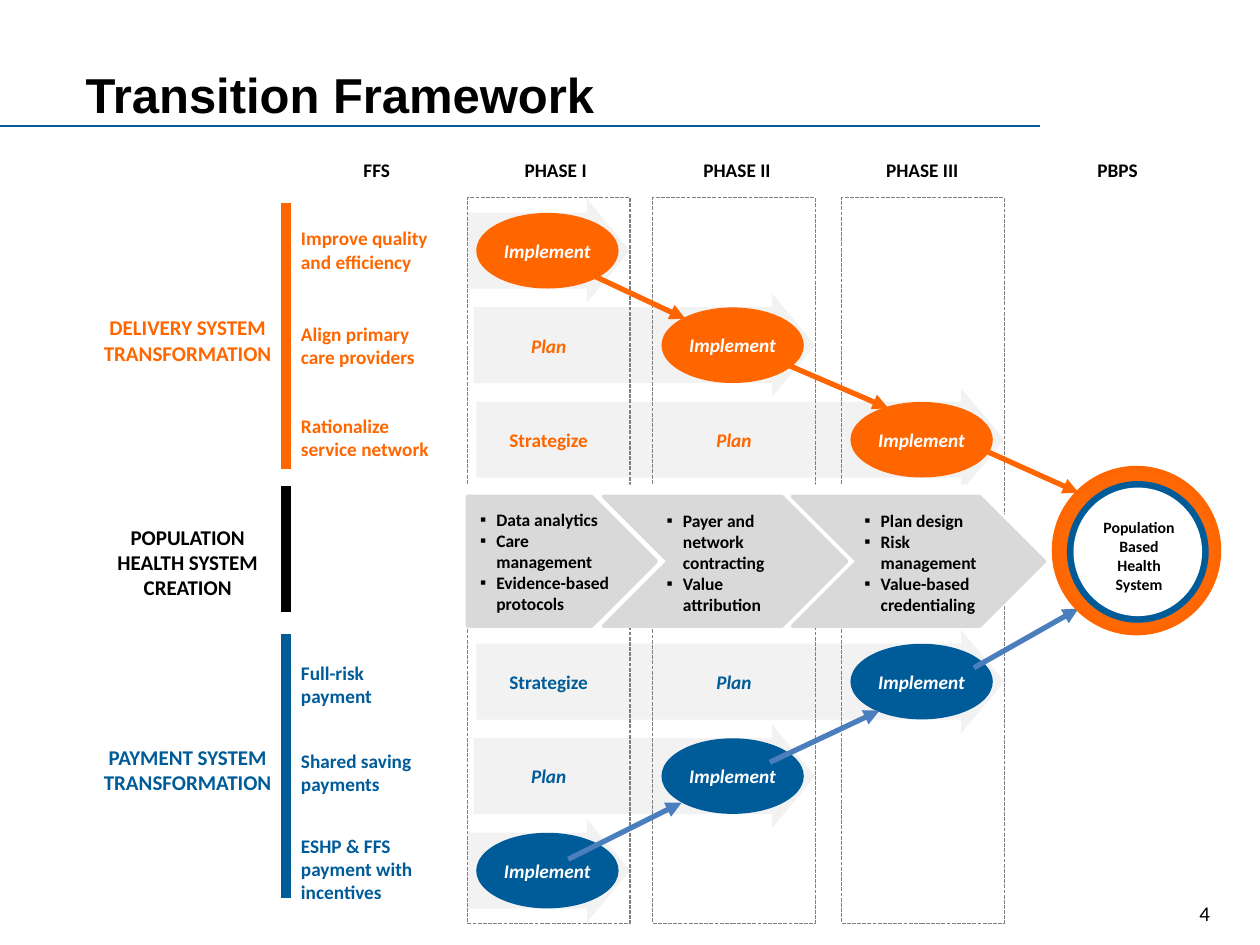
from typing import NamedTuple

from lxml import etree
from pptx import Presentation, util as u
from pptx.dml.color import RGBColor
from pptx.enum import dml, shapes, text
from pptx.oxml import ns

S, A = shapes.MSO_SHAPE, text.PP_ALIGN
MID, TOP = text.MSO_ANCHOR.MIDDLE, text.MSO_ANCHOR.TOP
ORANGE, BLUE, SKY = "FF6600", "005B99", "4B7EBC"
BLACK, WHITE, GREY, PALE = "000000", "FFFFFF", "D9D9D9", "F2F2F2"

deck = Presentation()
deck.slide_width, deck.slide_height = u.Inches(10), u.Inches(7.5)
COL, ROW = deck.slide_width / 10, deck.slide_height / 7.5
slide = deck.slides.add_slide(deck.slide_layouts[4])
PHASES = (3.71, 5.18, 6.68)
WIDE, STEP = 1.29, 0.75


class Box(NamedTuple):
    """Left, top, width and height in columns and rows."""
    x: float
    y: float
    w: float
    h: float


class Lane(NamedTuple):
    """One row of work that ends in an oval."""
    label: str
    top: float
    steps: tuple
    y: float
    hue: str


class Group(NamedTuple):
    """One side heading with its upright bar."""
    name: str
    top: float
    h: float
    bar: tuple
    hue: str


class Link(NamedTuple):
    """One arrow between stages."""
    start: tuple
    end: tuple
    hue: str


LANES = [
    Lane("Improve quality and efficiency", 1.75, (), 1.69, ORANGE),
    Lane("Align primary care providers", 2.51, ("Plan",), 1.69 + STEP, ORANGE),
    Lane("Rationalize service network", 3.24, ("Strategize", "Plan"), 1.69 + 2 * STEP, ORANGE),
    Lane("Full-risk payment", 5.2, ("Strategize", "Plan"), 5.11, BLUE),
    Lane("Shared saving payments", 5.9, ("Plan",), 5.11 + STEP, BLUE),
    Lane("ESHP & FFS payment with incentives", 6.57, (), 5.11 + 2 * STEP, BLUE),
]
GROUPS = [
    Group("DELIVERY SYSTEM TRANSFORMATION", 2.45, 0.5, (1.61, 3.72), ORANGE),
    Group("POPULATION HEALTH SYSTEM CREATION", 4.11, 0.71, (3.86, 4.86), BLACK),
    Group("PAYMENT SYSTEM TRANSFORMATION", 5.86, 0.5, (5.03, 7.13), BLUE),
]
LINKS = [
    Link((4.65, 2.16), (5.44, 2.53), ORANGE), Link((6.19, 2.87), (7.05, 3.24), ORANGE),
    Link((7.76, 3.55), (8.56, 3.91), ORANGE), Link((4.51, 6.82), (5.41, 6.37), SKY),
    Link((6.11, 6.05), (6.98, 5.64), SKY), Link((7.73, 5.3), (8.56, 4.83), SKY),
]
HEADS = {"FFS": 2.6, "PHASE I": 4.02, "PHASE II": 5.46, "PHASE III": 6.93, "PBPS": 8.48}
LISTS = [
    (Box(3.71, 3.99, 1.29, 0.94), ["Data analytics", "Care management", "Evidence-based protocols"]),
    (Box(5.19, 4, 1.28, 0.94), ["Payer and network contracting", "Value attribution"]),
    (Box(6.76, 4, 1.21, 0.94), ["Plan design", "Risk management", "Value-based credentialing"]),
]


def tint(hue: str) -> RGBColor:
    """Turn a hex string into a colour."""
    return RGBColor.from_string(hue)


def apply(item, vals: dict) -> None:
    """Set each attribute from a dict."""
    for key, val in vals.items():
        setattr(item, key, val)


def spot(box: Box) -> list:
    """Turn a grid box into slide lengths."""
    return [round(box.x * COL), round(box.y * ROW), round(box.w * COL), round(box.h * ROW)]


def write(item, lines: list, size: float, hue: str = BLACK, align=A.LEFT, mark: str = "",
          face: str = "Calibri", bold: bool = True, italic: bool = False, **frame) -> None:
    """Fill a shape with formatted paragraphs."""
    body = item.text_frame
    apply(body, {"auto_size": text.MSO_AUTO_SIZE.NONE, "word_wrap": True,
                 "vertical_anchor": TOP, **frame})
    body.text = "\n".join(lines)
    for para in body.paragraphs:
        apply(para, {"alignment": align, "space_before": u.Pt(0)})
        if mark:
            prop = para._p.get_or_add_pPr()
            prop.set("marL", str(u.Inches(0.13)))
            prop.set("indent", str(-u.Inches(0.13)))
            etree.SubElement(prop, ns.qn("a:buFont")).set("typeface", "Arial")
            etree.SubElement(prop, ns.qn("a:buChar")).set("char", mark)
        for run in para.runs:
            apply(run.font, {"name": face, "size": u.Pt(size), "bold": bold, "italic": italic})
            run.font.color.rgb = tint(hue)


def label(box: Box, words: str, size: float, **vals) -> None:
    """Add a text box."""
    write(slide.shapes.add_textbox(*spot(box)), [words], size, **vals)


def shape(kind, box: Box, fill: str = "", edge: str = "", width: float = 0):
    """Add a flat preset shape."""
    item = slide.shapes.add_shape(kind, *spot(box))
    item.shadow.inherit = False
    for part, hue in ((item.fill, fill), (item.line.fill, edge)):
        if hue:
            part.solid()
            part.fore_color.rgb = tint(hue)
        else:
            part.background()
    if edge:
        item.line.width = u.Pt(width)
    return item


def line(start: tuple, end: tuple, hue: str, width: float, tip: bool = False) -> None:
    """Add a straight line, with an arrowhead if asked."""
    ends = spot(Box(*start, *end))
    item = slide.shapes.add_connector(shapes.MSO_CONNECTOR.STRAIGHT, *ends)
    item.line.color.rgb = tint(hue)
    item.line.width = u.Pt(width)
    if tip:
        etree.SubElement(item.line._get_or_add_ln(), ns.qn("a:tailEnd")).set("type", "triangle")
    etree.SubElement(item._element.spPr, ns.qn("a:effectLst"))


def lane(row: Lane) -> None:
    """Draw a lane's band, oval, steps and label."""
    last = len(row.steps)
    left = (3.71, 3.76, 3.78)[last]
    band = shape(S.RIGHT_ARROW, Box(left, row.y - 0.11, PHASES[last] + WIDE - left, 0.82), PALE)
    band.adjustments[0], band.adjustments[1] = 0.735, 0.417
    oval = shape(S.OVAL, Box(PHASES[last] + 0.07, row.y, 1.13, 0.6), row.hue)
    sides = dict.fromkeys(("margin_left", "margin_right", "margin_top", "margin_bottom"), 0)
    write(oval, ["Implement"], 11, WHITE, A.CENTER, italic=True, vertical_anchor=MID,
          **{**sides, "word_wrap": False})
    for left, step in zip(PHASES, row.steps):
        label(Box(left, row.y + 0.16, WIDE, 0.29), step, 11, hue=row.hue,
              align=A.CENTER, italic=step == "Plan")
    label(Box(2.29, row.top, WIDE, 0.47), row.label, 11, hue=row.hue)


def goal() -> None:
    """Draw the ringed circle at the end."""
    ring = shape(S.OVAL, Box(8.37, 3.72, 1.3, 1.3), ORANGE, ORANGE, 3.25)
    shade = ring._element.spPr.find(ns.qn("a:solidFill"))[0]
    etree.SubElement(shade, ns.qn("a:alpha")).set("val", "98000")
    shape(S.OVAL, Box(8.49, 3.84, 1.08, 1.08), BLUE, BLUE, 3.25)
    shape(S.OVAL, Box(8.52, 3.87, 1.02, 1.02), WHITE)
    core = shape(S.RECTANGLE, Box(8.62, 4.17, 0.84, 0.48), WHITE)
    write(core, ["Population", "Based Health", "System"], 9, align=A.CENTER, vertical_anchor=MID)


def main() -> None:
    """Build the slide and save it."""
    title, *bodies = slide.placeholders
    apply(title, dict(zip(("left", "top", "width", "height"), spot(Box(0.58, 0.41, 7.25, 0.5)))))
    write(title, ["Transition Framework"], 28, face="Arial", margin_top=u.Inches(0.1))
    line((0, 1), (8.25, 1), BLUE, 0.75)
    label(Box(9.42, 7.1, 0.58, 0.4), "4", 12, bold=False)
    for row in LANES:
        lane(row)
    for left in PHASES:
        frame = shape(S.RECTANGLE, Box(left, 1.57, WIDE, 5.76), "", "808080", 0.75)
        frame.line.dash_style = dml.MSO_LINE.SQUARE_DOT
    shape(S.PENTAGON, Box(2.98, 3.86, 5.29, 1.08), WHITE, WHITE, 2)
    for kind, left, wide in ((S.PENTAGON, 3.71, 1.5), (S.CHEVRON, 4.79, 1.93), (S.CHEVRON, 6.29, 2)):
        shape(kind, Box(left, 3.94, wide, 1.03), GREY, GREY, 2)
    for body, (box, lines) in zip(bodies, LISTS):
        apply(body, dict(zip(("left", "top", "width", "height"), spot(box))))
        write(body, lines, 10, mark="▪")
        slide.shapes._spTree.append(body._element)
    for spare in bodies[len(LISTS):]:
        slide.shapes._spTree.remove(spare._element)
    for part in GROUPS:
        label(Box(0.71, part.top, 1.56, part.h), part.name, 12, hue=part.hue, align=A.CENTER)
        line((2.27, part.bar[0]), (2.27, part.bar[1]), part.hue, 6)
    for link in LINKS:
        line(link.start, link.end, link.hue, 3, True)
    for name, left in HEADS.items():
        label(Box(left, 1.21, 0.78, 0.29), name, 11, align=A.CENTER, word_wrap=False)
    goal()
    deck.save("out.pptx")


if __name__ == "__main__":
    main()
